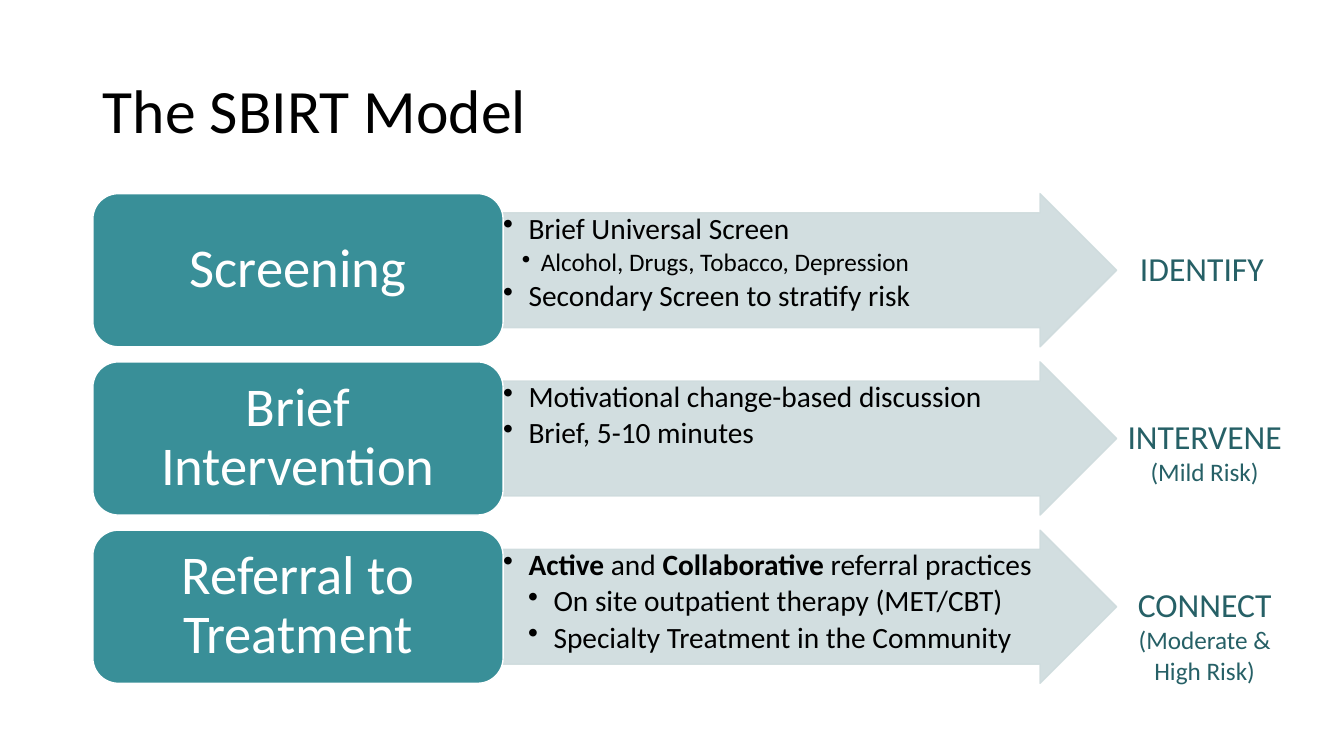
from lxml.etree import SubElement
from pptx import Presentation
from pptx.dml.color import RGBColor
from pptx.enum.shapes import MSO_SHAPE
from pptx.enum.text import MSO_ANCHOR, MSO_AUTO_SIZE, PP_ALIGN
from pptx.oxml.ns import qn
from pptx.util import Cm, Pt

FONT = "Calibri"
BLACK = RGBColor(0x00, 0x00, 0x00)
WHITE = RGBColor(0xFF, 0xFF, 0xFF)
TEAL = RGBColor(0x39, 0x8F, 0x98)
DARK_TEAL = RGBColor(0x26, 0x60, 0x66)
PALE_TEAL = RGBColor(0xCE, 0xDB, 0xDD)

# Row geometry in centimetres
FIRST_TOP, ROW_PITCH, ROW_HEIGHT = 4.88, 4.24, 3.86
STEP_LEFT, STEP_WIDTH = 2.34, 10.34
ARROW_LEFT, ARROW_WIDTH = 12.65, 15.49

# Each row: step, bullets (spans, level, size, indent, hanging), label left, label lines
# A span is (text, bold)
ROWS = [
    ("Screening",
     [([("Brief Universal Screen", False)], 1, 21, 0.64, 0.64),
      ([("Alcohol, Drugs, Tobacco, Depression", False)], 2, 18, 0.95, 0.48),
      ([("Secondary Screen to stratify risk", False)], 1, 21, 0.64, 0.64)],
     28.07, ["IDENTIFY"]),
    ("Brief Intervention",
     [([("Motivational change-based discussion", False)], 1, 21, 0.64, 0.64),
      ([("Brief, 5-10 minutes", False)], 1, 21, 0.64, 0.64)],
     28.14, ["INTERVENE", "(Mild Risk)"]),
    ("Referral to Treatment",
     [([("Active", True), (" and ", False), ("Collaborative", True),
        (" referral practices", False)], 1, 21, 0.64, 0.64),
      ([("On site outpatient therapy (MET/CBT)", False)], 2, 21, 1.27, 0.64),
      ([("Specialty Treatment in the Community", False)], 2, 21, 1.27, 0.64)],
     28.14, ["CONNECT", "(Moderate & High Risk)"]),
]


def style_para(para, size, color, align=PP_ALIGN.LEFT):
    para.alignment = align
    para.font.name = FONT
    para.font.size = Pt(size)
    para.font.color.rgb = color


def set_margins(frame, side, top):
    frame.margin_left = frame.margin_right = Cm(side)
    frame.margin_top = frame.margin_bottom = Cm(top)


def next_para(frame, index):
    return frame.paragraphs[0] if index == 0 else frame.add_paragraph()


def add_title(page, text):
    title = page.shapes.title
    title.left, title.top = Cm(2.34), Cm(1.02)
    title.width, title.height = Cm(29.21), Cm(3.68)
    frame = title.text_frame
    frame.text = text
    frame.vertical_anchor = MSO_ANCHOR.MIDDLE
    style_para(frame.paragraphs[0], 44, BLACK)
    frame.paragraphs[0].line_spacing = 0.9


def add_block(page, preset, left, top, width, fill, line):
    block = page.shapes.add_shape(
        preset, Cm(left), Cm(top), Cm(width), Cm(ROW_HEIGHT))
    block.shadow.inherit = False
    block.fill.solid()
    block.fill.fore_color.rgb = fill
    block.line.color.rgb = line
    block.line.width = Pt(1)
    return block


def add_arrow(page, top):
    arrow = add_block(page, MSO_SHAPE.RIGHT_ARROW, ARROW_LEFT, top,
                      ARROW_WIDTH, PALE_TEAL, PALE_TEAL)
    arrow.adjustments[0] = 0.75
    arrow.adjustments[1] = 0.5
    # Fill and outline are both 90% opaque
    for color in list(arrow.element.spPr.iter(qn("a:srgbClr"))):
        SubElement(color, qn("a:alpha"), val="90000")


def add_step(page, top, text):
    step = add_block(page, MSO_SHAPE.ROUNDED_RECTANGLE, STEP_LEFT, top,
                     STEP_WIDTH, TEAL, WHITE)
    frame = step.text_frame
    frame.text = text
    frame.word_wrap = True
    frame.vertical_anchor = MSO_ANCHOR.MIDDLE
    set_margins(frame, 0.41, 0.2)
    style_para(frame.paragraphs[0], 39, WHITE, PP_ALIGN.CENTER)
    frame.paragraphs[0].line_spacing = 0.9


def add_details(page, top, bullets):
    box = page.shapes.add_textbox(
        Cm(ARROW_LEFT), Cm(top + 0.48), Cm(14.05), Cm(2.9))
    frame = box.text_frame
    frame.word_wrap = True
    set_margins(frame, 0.03, 0.03)
    for index, (spans, level, size, indent, hanging) in enumerate(bullets):
        para = next_para(frame, index)
        style_para(para, size, BLACK)
        para.level = level
        para.line_spacing = 0.9
        para.space_after = Pt(size * 0.15)
        for text, bold in spans:
            span = para.add_run()
            span.text = text
            span.font.bold = bold
        # Hanging indent and bullet character
        properties = para._p.get_or_add_pPr()
        properties.set("marL", str(Cm(indent)))
        properties.set("indent", str(-Cm(hanging)))
        SubElement(properties, qn("a:buChar"), char="•")
        properties.append(properties.find(qn("a:defRPr")))


def add_label(page, left, top, lines):
    heights = [1.27, 2.06, 2.82]
    box = page.shapes.add_textbox(
        Cm(left), Cm(top + 1.24), Cm(4.44),
        Cm(heights[sum(len(line) > 12 for line in lines) + len(lines) - 1]))
    frame = box.text_frame
    frame.word_wrap = True
    frame.auto_size = MSO_AUTO_SIZE.SHAPE_TO_FIT_TEXT
    for index, line in enumerate(lines):
        para = next_para(frame, index)
        para.text = line
        style_para(para, 24 if index == 0 else 18, DARK_TEAL, PP_ALIGN.CENTER)


def main():
    deck = Presentation()
    deck.slide_width, deck.slide_height = Cm(33.87), Cm(19.05)
    page = deck.slides.add_slide(deck.slide_layouts[5])
    add_title(page, "The SBIRT Model")

    # One row per step: arrow, details, step box and outcome label
    for index, (step, bullets, label_left, label) in enumerate(ROWS):
        top = FIRST_TOP + index * ROW_PITCH
        add_arrow(page, top)
        add_details(page, top, bullets)
        add_step(page, top, step)
        add_label(page, label_left, top, label)

    deck.save("out.pptx")


if __name__ == "__main__":
    main()
